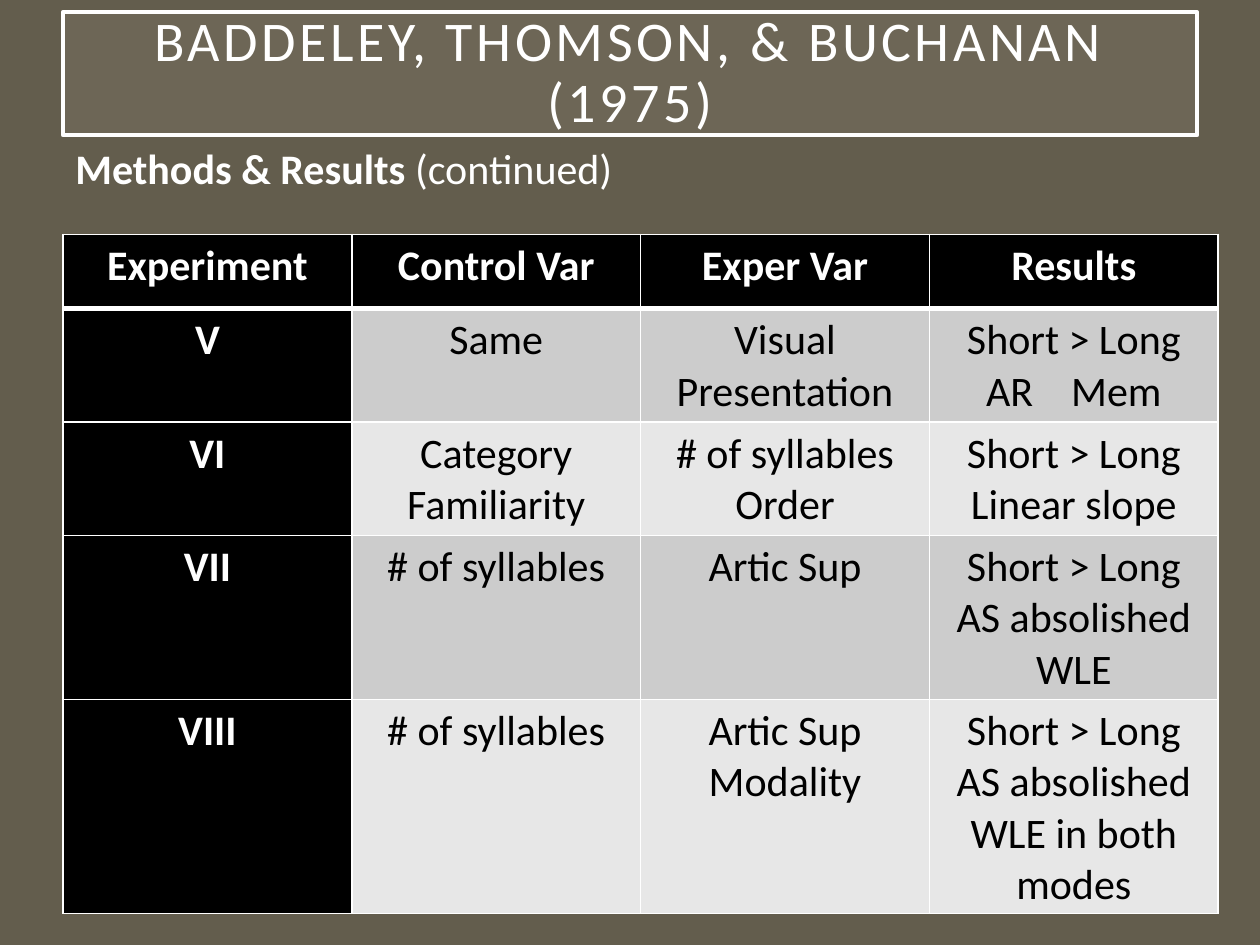
from lxml import etree
from pptx import Presentation, util as u
from pptx.dml.color import RGBColor
from pptx.enum import shapes, text
from pptx.oxml.ns import qn

WIDTH, HEIGHT = 10, 7.5
FONT = "Calibri"
COLORS = {
    "background": "635D4D",
    "title": "A7A08E",
    "light": "FFFFFF",
    "dark": "000000",
    "odd": "CCCCCC",
    "even": "E7E7E7",
}
EXPERIMENTS = [
    ["Experiment", "Control Var", "Exper Var", "Results"],
    ["V", "Same", "Visual Presentation", "Short > Long\nAR    Mem"],
    ["VI", "Category\nFamiliarity", "# of syllables\nOrder", "Short > Long\nLinear slope"],
    ["VII", "# of syllables", "Artic Sup", "Short > Long\nAS absolished WLE"],
    ["VIII", "# of syllables", "Artic Sup\nModality",
     "Short > Long\nAS absolished WLE in both modes"],
]
ROW_HEIGHTS = [0.59, 0.9, 0.9, 1.3, 1.7]


def rgb(name):
    """Return the named palette colour."""
    return RGBColor.from_string(COLORS[name])


def region(left, top, width, height):
    """Turn shares of the slide into a box of lengths."""
    return [u.Inches(share * side) for share, side in
            zip((left, top, width, height), (WIDTH, HEIGHT) * 2)]


def set_font(font, size, color, bold=None):
    """Give a font the slide's typeface with a size, colour and weight."""
    font.name, font.size, font.bold = FONT, u.Pt(size), bold
    font.color.rgb = rgb(color)


def add_title(slide, box, wording):
    """Place the framed, translucent title in its box."""
    banner = slide.shapes.add_shape(shapes.MSO_SHAPE.RECTANGLE, *box)
    banner.shadow.inherit = False
    banner.fill.solid()
    banner.fill.fore_color.rgb = rgb("title")
    tint = banner.fill._xPr.find(".//" + qn("a:srgbClr"))
    etree.SubElement(tint, qn("a:alpha"), val="15000")
    banner.line.color.rgb = rgb("light")
    banner.line.width = u.Pt(2.5)
    frame = banner.text_frame
    frame.word_wrap = True
    frame.vertical_anchor = text.MSO_ANCHOR.MIDDLE
    frame.margin_left = frame.margin_right = u.Inches(0.2)
    frame.margin_top = frame.margin_bottom = u.Inches(0.2)
    heading = frame.paragraphs[0]
    heading.alignment = text.PP_ALIGN.CENTER
    heading.line_spacing = 0.9
    run = heading.add_run()
    run.text = wording
    set_font(run.font, 32, "light")
    run.font._element.set("spc", "200")


def add_subtitle(slide, box, topic, remark):
    """Place the section line with a bold topic and a plain remark."""
    frame = slide.shapes.add_textbox(*box).text_frame
    frame.word_wrap = True
    section = frame.paragraphs[0]
    for wording, bold in ((topic, True), (remark, False)):
        run = section.add_run()
        run.text = wording
        set_font(run.font, 24, "light", bold)


def add_borders(cell, bottom):
    """Draw light borders round a cell, with its own bottom width."""
    properties = cell._tc.get_or_add_tcPr()
    edges = {"lnL": 1, "lnR": 1, "lnT": 1, "lnB": bottom}
    for position, (edge, width) in enumerate(edges.items()):
        border = etree.Element(qn(f"a:{edge}"), w=str(u.Pt(width)))
        paint = etree.SubElement(border, qn("a:solidFill"))
        etree.SubElement(paint, qn("a:srgbClr"), val=COLORS["light"])
        properties.insert(position, border)


def add_experiments(slide, box, rows):
    """Place the table of experiments with header row and first column."""
    table = slide.shapes.add_table(len(rows), len(rows[0]), *box).table
    for row, height in zip(table.rows, ROW_HEIGHTS):
        row.height = u.Inches(height)
    for r, entries in enumerate(rows):
        for c, entry in enumerate(entries):
            is_header = r == 0 or c == 0
            band = "dark" if is_header else "odd" if r % 2 else "even"
            cell = table.cell(r, c)
            cell.text = entry
            cell.fill.solid()
            cell.fill.fore_color.rgb = rgb(band)
            add_borders(cell, 3 if r == 0 else 1)
            for line in cell.text_frame.paragraphs:
                line.alignment = text.PP_ALIGN.CENTER
                set_font(line.font, 24, "light" if is_header else "dark", is_header)


def main():
    """Build the slide and save it."""
    deck = Presentation()
    deck.slide_width, deck.slide_height = u.Inches(WIDTH), u.Inches(HEIGHT)
    slide = deck.slides.add_slide(deck.slide_layouts[6])
    slide.background.fill.solid()
    slide.background.fill.fore_color.rgb = rgb("background")
    add_title(slide, region(0.05, 0.013, 0.9, 0.13),
              "BADDELEY, THOMSON, & BUCHANAN (1975)")
    add_subtitle(slide, region(0.05, 0.144, 0.9, 0.85),
                 "Methods & Results", " (continued)")
    add_experiments(slide, region(0.05, 0.248, 0.917, 0.719), EXPERIMENTS)
    deck.save("out.pptx")


if __name__ == "__main__":
    main()
